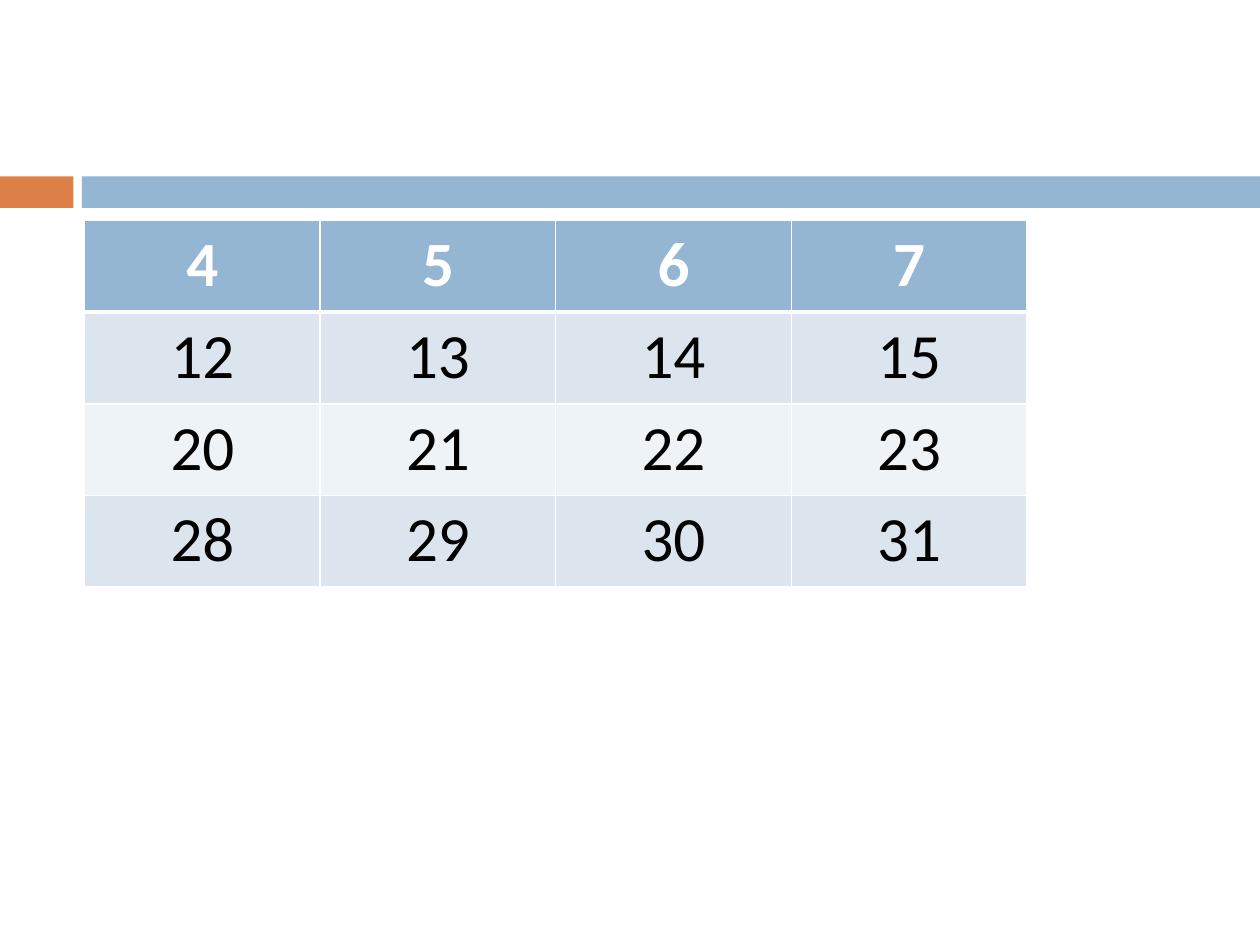
from pptx import Presentation
from pptx.dml.color import RGBColor
from pptx.enum.shapes import MSO_SHAPE as Shape
from pptx.enum.text import PP_ALIGN as Align
from pptx.oxml import parse_xml
from pptx.oxml.ns import nsdecls
from pptx.util import Pt

BLUE, ORANGE, WHITE, BLACK = "94B6D2", "DD8047", "FFFFFF", "000000"
BANDS = ["EEF3F7", "DCE5EE"]


def paint(fill, tone):
    """Give a fill one solid colour."""
    fill.solid()
    fill.fore_color.rgb = RGBColor.from_string(tone)


def add_bar(slide, left, top, width, height, tone):
    """Place one plain bar."""
    bar = slide.shapes.add_shape(
        Shape.RECTANGLE, Pt(left), Pt(top), Pt(width), Pt(height))
    bar.shadow.inherit = False
    bar.line.fill.background()
    paint(bar.fill, tone)


def add_band(slide, left, top, width, height):
    """Place the orange tab and the blue bar across the box."""
    tab, gap = 42, 4.8
    start = tab + gap
    add_bar(slide, left, top, tab, height, ORANGE)
    add_bar(slide, left + start, top, width - start, height, BLUE)


def add_edge(cell, side, width):
    """Draw one white cell border."""
    cell._tc.get_or_add_tcPr().append(parse_xml(
        f'<a:ln{side} {nsdecls("a")} w="{Pt(width)}"><a:solidFill>'
        f'<a:srgbClr val="{WHITE}"/></a:solidFill></a:ln{side}>'))


def style_cell(cell, row, text):
    """Write one number and style its cell by row."""
    head = row == 0
    edges = {"L": 1, "R": 1, "T": 3 if row == 1 else 1, "B": 3 if head else 1}
    for side, width in edges.items():
        add_edge(cell, side, width)
    paint(cell.fill, BLUE if head else BANDS[row % 2])
    cell.text_frame.text = text
    para = cell.text_frame.paragraphs[0]
    para.alignment = Align.CENTER
    font = para.runs[0].font
    font.name, font.size, font.bold = "Calibri", Pt(36), head
    font.color.rgb = RGBColor.from_string(WHITE if head else BLACK)


def add_grid(slide, left, top, width, height):
    """Place the table of numbers, each row eight above the last."""
    count = 4
    grid = slide.shapes.add_table(
        count, count, Pt(left), Pt(top), Pt(width), Pt(height)).table
    for col in grid.columns:
        col.width = Pt(width / count)
    for row in range(count):
        grid.rows[row].height = Pt(height / count)
        for col in range(count):
            style_cell(grid.cell(row, col), row, str(4 + 8 * row + col))


def main():
    """Build and save the slide."""
    deck = Presentation()
    deck.slide_width, deck.slide_height = Pt(720), Pt(540)
    slide = deck.slides.add_slide(deck.slide_layouts[6])
    add_band(slide, 0, 100.8, 720, 18)
    add_grid(slide, 48.4, 126, 538.4, 209.6)
    deck.save("out.pptx")


if __name__ == "__main__":
    main()
